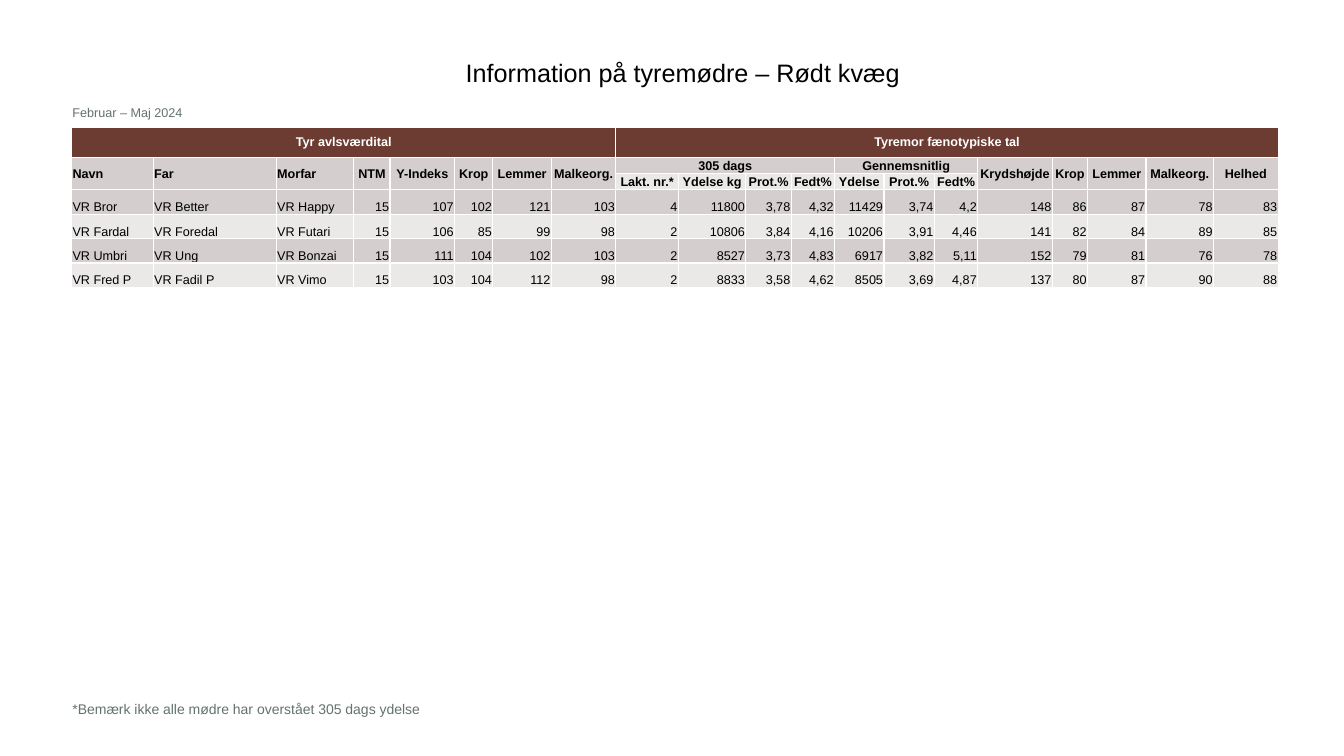
from pptx import Presentation
from pptx.dml.color import RGBColor
from pptx.enum.text import MSO_ANCHOR as Anchor, PP_ALIGN as Align
from pptx.util import Inches, Pt

BROWN = RGBColor(0x6C, 0x3C, 0x32)
DARK = RGBColor(0xD4, 0xCE, 0xCE)
LIGHT = RGBColor(0xEB, 0xE8, 0xE8)
GREY = RGBColor(0x63, 0x72, 0x70)
BLACK = RGBColor(0, 0, 0)
WHITE = RGBColor(255, 255, 255)

WIDTHS = [0.81, 1.22, 0.77, 0.36, 0.64, 0.38, 0.58, 0.64, 0.62, 0.67,
          0.45, 0.43, 0.49, 0.5, 0.43, 0.74, 0.35, 0.58, 0.67, 0.64]
HEIGHTS = [0.3, 0.16, 0.16, 0.25, 0.24, 0.24, 0.24]
NAMES = 3

BULLS = ["Navn", "Far", "Morfar", "NTM", "Y-Indeks", "Krop", "Lemmer", "Malkeorg."]
YIELDS = ["Lakt. nr.*", "Ydelse kg", "Prot.%", "Fedt%", "Ydelse", "Prot.%", "Fedt%"]
TRAITS = ["Krydshøjde", "Krop", "Lemmer", "Malkeorg.", "Helhed"]
LEFT = len(BULLS)
RIGHT = LEFT + len(YIELDS)
COLS = len(WIDTHS)

ROWS = [
    ["Tyr avlsværdital"] + [""] * (LEFT - 1)
    + ["Tyremor fænotypiske tal"] + [""] * (COLS - LEFT - 1),
    BULLS + ["305 dags", "", "", "", "Gennemsnitlig", "", ""] + TRAITS,
    [""] * LEFT + YIELDS + [""] * len(TRAITS),
    ["VR Bror", "VR Better", "VR Happy", "15", "107", "102", "121", "103", "4", "11800",
     "3,78", "4,32", "11429", "3,74", "4,2", "148", "86", "87", "78", "83"],
    ["VR Fardal", "VR Foredal", "VR Futari", "15", "106", "85", "99", "98", "2", "10806",
     "3,84", "4,16", "10206", "3,91", "4,46", "141", "82", "84", "89", "85"],
    ["VR Umbri", "VR Ung", "VR Bonzai", "15", "111", "104", "102", "103", "2", "8527",
     "3,73", "4,83", "6917", "3,82", "5,11", "152", "79", "81", "76", "78"],
    ["VR Fred P", "VR Fadil P", "VR Vimo", "15", "103", "104", "112", "98", "2", "8833",
     "3,58", "4,62", "8505", "3,69", "4,87", "137", "80", "87", "90", "88"],
]
HEADS = 3
SPANS = [(0, 0, 0, LEFT - 1), (0, LEFT, 0, COLS - 1),
         (1, LEFT, 1, LEFT + 3), (1, LEFT + 4, 1, RIGHT - 1)]
SPANS += [(1, c, 2, c) for c in range(COLS) if not LEFT <= c < RIGHT]


def style(para, size, color, bold=False):
    font = para.font
    font.name = "Arial"
    font.size = Pt(size)
    font.bold = bold
    font.color.rgb = color


deck = Presentation()
deck.slide_width = Inches(13.33)
deck.slide_height = Inches(7.5)
slide = deck.slides.add_slide(deck.slide_layouts[6])

table = slide.shapes.add_table(len(ROWS), COLS, Inches(0.71), Inches(1.26),
                               Inches(11.97), Inches(1.6)).table
for col, width in zip(table.columns, WIDTHS):
    col.width = Inches(width)
for row, height in zip(table.rows, HEIGHTS):
    row.height = Inches(height)

for r, texts in enumerate(ROWS):
    head = r < HEADS
    for c, text in enumerate(texts):
        cell = table.cell(r, c)
        cell.margin_left = cell.margin_right = cell.margin_top = Inches(0.01)
        cell.margin_bottom = 0
        cell.vertical_anchor = Anchor.MIDDLE if head else Anchor.BOTTOM
        cell.fill.solid()
        cell.fill.fore_color.rgb = BROWN if r == 0 else DARK if r % 2 else LIGHT
        cell.text = text
        para = cell.text_frame.paragraphs[0]
        if r and c < NAMES:
            para.alignment = Align.LEFT
        else:
            para.alignment = Align.CENTER if head else Align.RIGHT
        style(para, 9, BLACK if r else WHITE, head)

for top, left, low, right in SPANS:
    table.cell(top, left).merge(table.cell(low, right))

NOTES = [
    ("*Bemærk ikke alle mødre har overstået 305 dags ydelse", 0.62, 6.9, 3.84, 0.27, 10, GREY),
    ("Information på tyremødre – Rødt kvæg", 4.52, 0.52, 4.53, 0.4, 18, BLACK),
    ("Februar – Maj 2024", 0.62, 0.99, 3.84, 0.25, 9, GREY),
]
for text, x, y, w, h, size, color in NOTES:
    box = slide.shapes.add_textbox(Inches(x), Inches(y), Inches(w), Inches(h))
    frame = box.text_frame
    frame.word_wrap = True
    frame.text = text
    style(frame.paragraphs[0], size, color)

deck.save("out.pptx")
